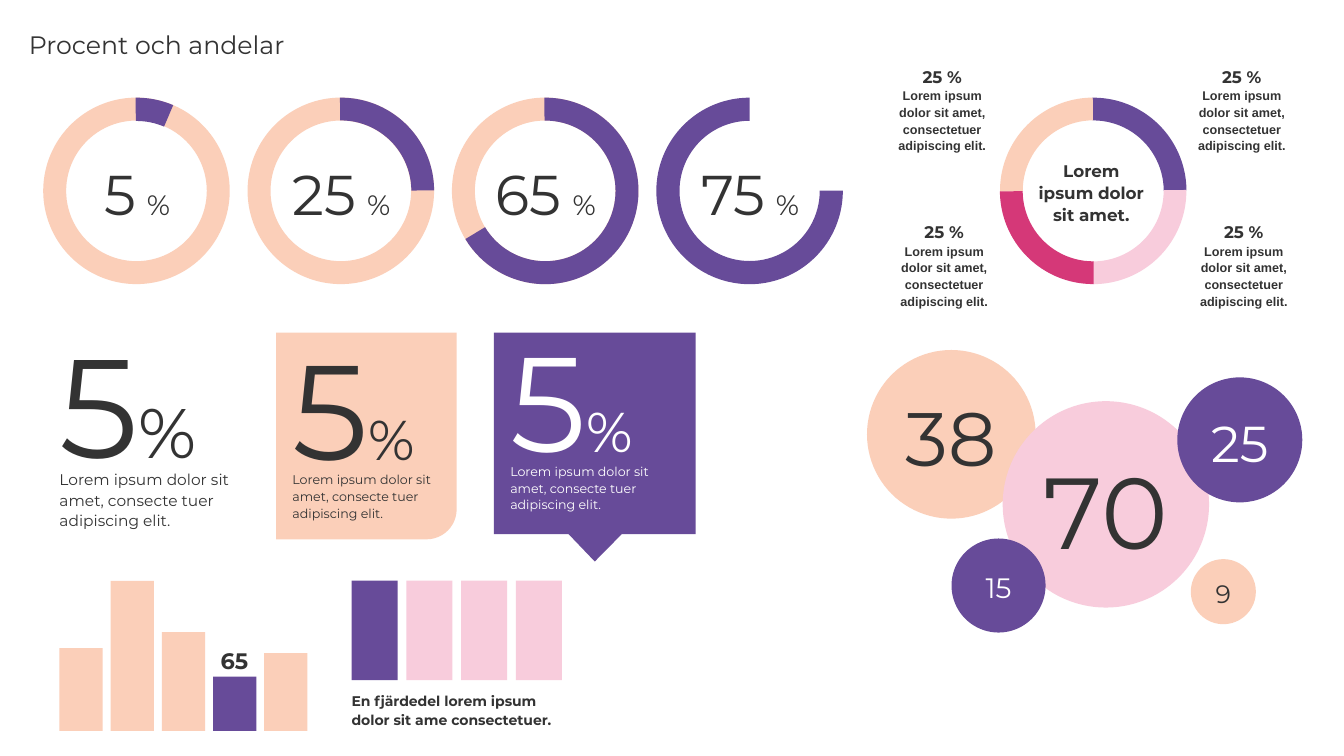
import pptx
import pptx.util
import pptx.dml.color
import pptx.enum.shapes
import pptx.enum.text
import pptx.oxml.ns

Cm = pptx.util.Cm
SHAPE = pptx.enum.shapes.MSO_SHAPE
ANCHOR = pptx.enum.text.MSO_ANCHOR
LEFT = pptx.enum.text.PP_ALIGN.LEFT
CENTER = pptx.enum.text.PP_ALIGN.CENTER
PEACH, VIOLET, PINK, MAGENTA = "FBCFB9", "674B99", "F8CCDC", "D53878"
DARK, WHITE = "333333", "FFFFFF"
LOREM = "Lorem ipsum dolor sit amet, consecte tuer adipiscing elit."


def paint(fill, colour):
    fill.solid()
    fill.fore_color.rgb = pptx.dml.color.RGBColor.from_string(colour)


def write(box, lines, colour=DARK, align=LEFT, bold=False, insets=(0, 0, 0, 0)):
    """Each line is (line spacing, [(text, size), ...])."""
    frame = box.text_frame
    frame.word_wrap = True
    (frame.margin_left, frame.margin_top,
     frame.margin_right, frame.margin_bottom) = map(Cm, insets)
    for index, (spacing, spans) in enumerate(lines):
        para = frame.add_paragraph() if index else frame.paragraphs[0]
        para.alignment = align
        para.line_spacing = spacing
        for text, size in spans:
            span = para.add_run()
            span.text = text
            span.font.name = "Montserrat"
            span.font.size = pptx.util.Pt(size)
            span.font.bold = bold
            paint(span.font.fill, colour)


deck = pptx.Presentation()
deck.slide_width, deck.slide_height = Cm(33.87), Cm(19.05)
page = deck.slides.add_slide(deck.slide_layouts[6])
shapes = page.shapes

# Title
title = shapes.add_textbox(Cm(0.48), Cm(0.61), Cm(32.64), Cm(1.02))
write(title, [(1.0, [("Procent och andelar", 18)])], insets=(0.25, 0.13, 0.25, 0.13))

# Percentage rings: number, arc start, arc end, thickness
RING_TOP, RING_SIZE = Cm(2.46), Cm(4.7)
rings = [
    ("5", 53.66, 67.9, 0.125),
    ("25", 53.66, 107.81, 0.122),
    ("65", 53.66, 197.35, 0.123),
    ("75", 107.89, 54.04, 0.124),
]
for column, (number, *arc_values) in enumerate(rings):
    left = 1.09 + 5.15 * column
    if number != "75":
        track = shapes.add_shape(SHAPE.DONUT, Cm(left), RING_TOP, RING_SIZE, RING_SIZE)
        track.adjustments[0] = 0.123
        paint(track.fill, PEACH)
    arc = shapes.add_shape(SHAPE.BLOCK_ARC, Cm(left), RING_TOP, RING_SIZE, RING_SIZE)
    arc.rotation = 180
    for index, value in enumerate(arc_values):
        arc.adjustments[index] = value
    paint(arc.fill, VIOLET)
    label = shapes.add_textbox(Cm(left + 0.61), Cm(4.01), Cm(3.51), Cm(1.7))
    write(label, [(1.0, [(number, 40), (" ", 30), ("%", 20)])], align=CENTER)

# Ring in four quarters
for rotation, colour in [(180, VIOLET), (90, PEACH), (0, MAGENTA), (270, PINK)]:
    quarter = shapes.add_shape(SHAPE.BLOCK_ARC, Cm(25.2), RING_TOP, RING_SIZE, RING_SIZE)
    quarter.rotation = rotation
    for index, value in enumerate((53.66, 107.81, 0.122)):
        quarter.adjustments[index] = value
    paint(quarter.fill, colour)

center = shapes.add_textbox(Cm(26.11), Cm(3.99), Cm(2.79), Cm(1.68))
write(center, [(1.1, [("Lorem ipsum dolor sit amet.", 12)])], align=CENTER, bold=True)

for left, top in [(22.35, 1.63), (22.4, 5.54), (29.9, 1.63), (29.95, 5.54)]:
    caption = shapes.add_textbox(Cm(left), Cm(top), Cm(2.79), Cm(2.24))
    lines = [(1.1, [("25 %", 12)]),
             (1.1, [("Lorem ipsum dolor sit amet, consectetuer adipiscing elit.", 9)])]
    write(caption, lines, align=CENTER, bold=True)
    caption.text_frame.paragraphs[1].runs[0].font.name = "Arial"

# Large figure without background
figure = shapes.add_textbox(Cm(1.5), Cm(10.54), Cm(4.88), Cm(2.82))
write(figure, [(0.3, [("5", 100), ("%", 50)]), (1.1, [(LOREM, 11)])])

# Card with one rounded corner at bottom right
card_lines = [(0.3, [("5", 96), ("%", 40)]), (1.1, [(LOREM, 9)])]
card = shapes.add_shape(SHAPE.ROUND_1_RECTANGLE, Cm(6.96), Cm(8.38), Cm(4.55), Cm(5.21))
card.rotation = 180
card.element.spPr.find(pptx.oxml.ns.qn("a:xfrm")).set("flipH", "1")
paint(card.fill, PEACH)
card_text = shapes.add_textbox(Cm(6.96), Cm(10.34), Cm(4.55), Cm(3.28))
write(card_text, card_lines, insets=(0.41, 0.3, 0.41, 0.41))

# Callout with a pointer below
outline = [(17.53, 8.38), (12.45, 8.38), (12.45, 13.46), (14.33, 13.46),
           (14.99, 14.15), (15.67, 13.46)]
builder = shapes.build_freeform(Cm(17.53), Cm(13.46))
builder.add_line_segments([(Cm(x), Cm(y)) for x, y in outline])
callout = builder.convert_to_shape()
paint(callout.fill, VIOLET)
callout.text_frame.vertical_anchor = ANCHOR.MIDDLE
write(callout, card_lines, WHITE, insets=(0.41, 1.7, 0.41, 0.89))

# Columns standing on a common base
COLUMN_BASE = 18.42
for index, height in enumerate([2.09, 3.78, 2.49, 1.37, 1.96]):
    column = shapes.add_shape(SHAPE.RECTANGLE, Cm(1.5 + 1.29 * index),
                              Cm(COLUMN_BASE - height), Cm(1.09), Cm(height))
    paint(column.fill, VIOLET if index == 3 else PEACH)
column_label = shapes.add_textbox(Cm(5.44), Cm(16.23), Cm(0.94), Cm(0.71))
write(column_label, [(1.1, [("65", 16)])], align=CENTER, bold=True)

# One bar in four
for index, colour in enumerate([VIOLET, PINK, PINK, PINK]):
    bar = shapes.add_shape(SHAPE.RECTANGLE, Cm(8.86 + 1.38 * index), Cm(14.63),
                           Cm(1.16), Cm(2.51))
    paint(bar.fill, colour)
bar_caption = shapes.add_textbox(Cm(8.86), Cm(17.42), Cm(5.54), Cm(0.91))
write(bar_caption, [(1.1, [("En fjärdedel lorem ipsum dolor sit ame consectetuer.", 10)])],
      bold=True)

# Bubbles: number, text size, left, top, diameter, fill, text colour, spacing, top inset
bubbles = [
    ("38", 54, 21.85, 8.82, 4.25, PEACH, DARK, 1.0, 0.1),
    ("70", 72, 25.27, 10.11, 5.2, PINK, DARK, 0.8, 0.79),
    ("9", 18, 30.01, 14.09, 1.64, PEACH, DARK, 1.0, 0.1),
    ("25", 36, 29.67, 9.51, 3.15, VIOLET, WHITE, 1.0, 0.1),
    ("15", 20, 23.98, 13.57, 2.37, VIOLET, WHITE, 1.0, 0.1),
]
for number, size, left, top, diameter, fill, colour, spacing, inset in bubbles:
    bubble = shapes.add_shape(SHAPE.OVAL, Cm(left), Cm(top), Cm(diameter), Cm(diameter))
    paint(bubble.fill, fill)
    bubble.text_frame.vertical_anchor = ANCHOR.MIDDLE
    write(bubble, [(spacing, [(number, size)])], colour, CENTER, insets=(0, inset, 0, 0))

# No outlines or shadows
for shape in shapes:
    shape.line.fill.background()
    shape.shadow.inherit = False

deck.save("out.pptx")
